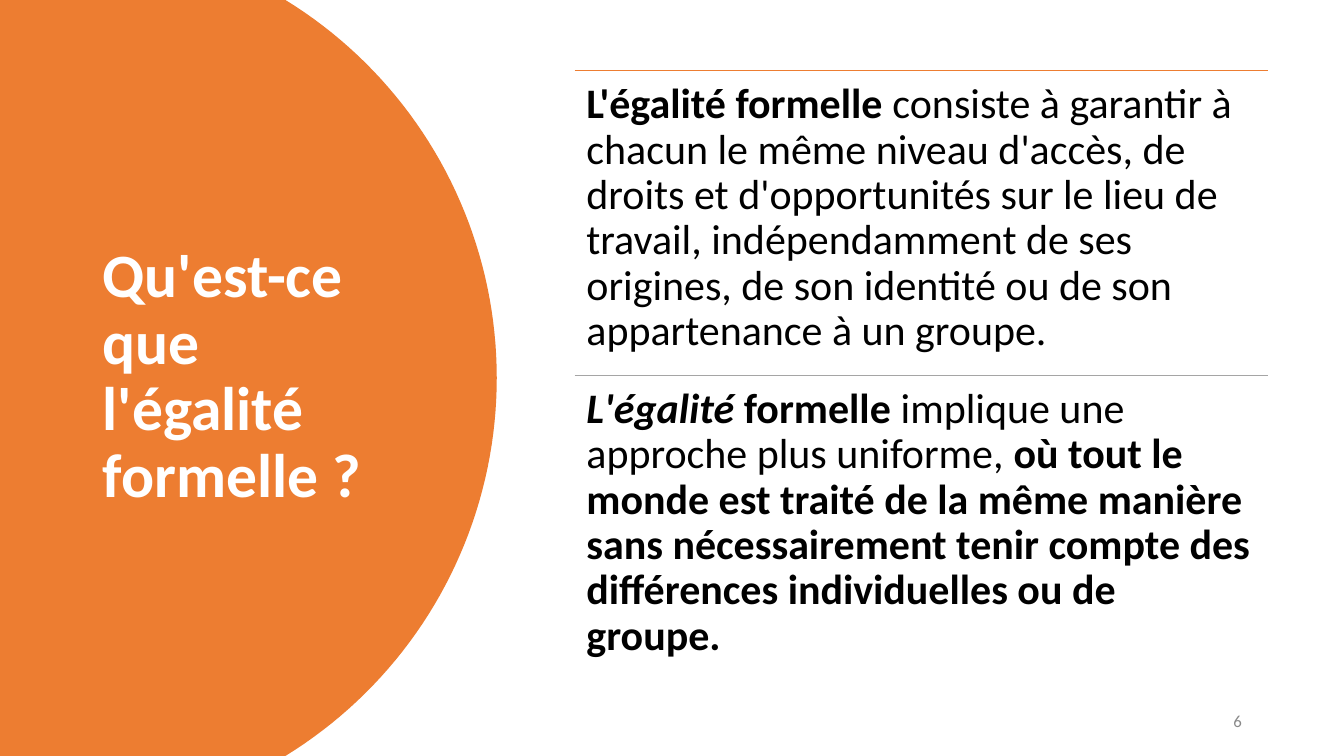
import math

from lxml import etree
from pptx import Presentation
from pptx.dml.color import RGBColor
from pptx.enum.shapes import MSO_CONNECTOR
from pptx.enum.text import MSO_ANCHOR, PP_ALIGN
from pptx.oxml.ns import qn
from pptx.util import Cm, Pt

STRAIGHT = MSO_CONNECTOR.STRAIGHT
TOP, MIDDLE = MSO_ANCHOR.TOP, MSO_ANCHOR.MIDDLE
LEFT, RIGHT = PP_ALIGN.LEFT, PP_ALIGN.RIGHT

WIDTH, HEIGHT = 33.87, 19.05
ORANGE, GREY, WHITE, BLACK = "ED7D31", "A5A5A5", "FFFFFF", "000000"
PAGE_GREY = "898989"


def rgb(value):
    return RGBColor.from_string(value)


class SlideBuilder:
    font = "Calibri"

    def __init__(self, slide):
        self.s = slide

    def outline(self, points, fill):
        start, *rest = [(Cm(x), Cm(y)) for x, y in points]
        builder = self.s.shapes.build_freeform(*start)
        builder.add_line_segments(rest, close=True)
        sp = builder.convert_to_shape()
        sp.shadow.inherit = False
        sp.fill.solid()
        sp.fill.fore_color.rgb = rgb(fill)
        sp.line.fill.background()

    def rule(self, x, y, width, color):
        line = self.s.shapes.add_connector(STRAIGHT, Cm(x), Cm(y), Cm(x + width), Cm(y))
        line.line.color.rgb = rgb(color)
        line.line.width = Pt(1)
        etree.SubElement(line._element.spPr, qn("a:effectLst"))

    def text(self, box, runs, size, color, anchor=MIDDLE, align=LEFT, spacing=0.9, inset=None):
        sp = self.s.shapes.add_textbox(*[Cm(v) for v in box])
        tf = sp.text_frame
        tf.word_wrap = True
        tf.vertical_anchor = anchor
        if inset is not None:
            tf.margin_left = tf.margin_right = tf.margin_top = tf.margin_bottom = Cm(inset)
        p = tf.paragraphs[0]
        p.alignment = align
        p.line_spacing = spacing
        p.font.name = self.font
        p.font.size = Pt(size)
        p.font.color.rgb = rgb(color)
        for content, style in runs:
            r = p.add_run()
            r.text = content
            r.font.name = self.font
            r.font.size = Pt(size)
            r.font.color.rgb = rgb(color)
            r.font.bold = "b" in style
            r.font.italic = "i" in style


def disc_points(edge, radius, steps=80):
    half = HEIGHT / 2
    limit = math.asin(half / radius)
    angles = [limit * (2 * i / steps - 1) for i in range(steps + 1)]
    arc = [(edge - radius + radius * math.cos(a), half + radius * math.sin(a)) for a in angles]
    return [(0, 0), *arc, (0, HEIGHT)]


def main():
    prs = Presentation()
    prs.slide_width, prs.slide_height = Cm(WIDTH), Cm(HEIGHT)
    slide = SlideBuilder(prs.slides.add_slide(prs.slide_layouts[6]))

    slide.outline(disc_points(edge=12.52, radius=11.18), ORANGE)
    slide.text((2.34, 1.78, 8.2, 15.47), [("Qu'est-ce que l'égalité formelle ?", "b")], 44, WHITE)
    slide.text((23.93, 17.65, 7.62, 1.02), [("6", "")], 12, PAGE_GREY, align=RIGHT, spacing=1.0)

    definitions = [
        (ORANGE, [
            ("L'égalité formelle ", "b"),
            ("consiste à garantir à chacun le même niveau d'accès, de droits et "
             "d'opportunités sur le lieu de travail, indépendamment de ses origines, "
             "de son identité ou de son appartenance à un groupe.", ""),
        ]),
        (GREY, [
            ("L'égalité ", "bi"),
            ("formelle ", "b"),
            ("implique une approche plus uniforme, ", ""),
            ("où tout le monde est traité de la même manière sans nécessairement "
             "tenir compte des différences individuelles ou de groupe.", "b"),
        ]),
    ]
    left, top, width, row_height = 14.48, 1.78, 17.48, 7.68
    for i, (color, runs) in enumerate(definitions):
        y = top + i * row_height
        slide.rule(left, y, width, color)
        slide.text((left, y, width, row_height), runs, 30, BLACK, anchor=TOP, inset=0.3)

    prs.save("out.pptx")


if __name__ == "__main__":
    main()
